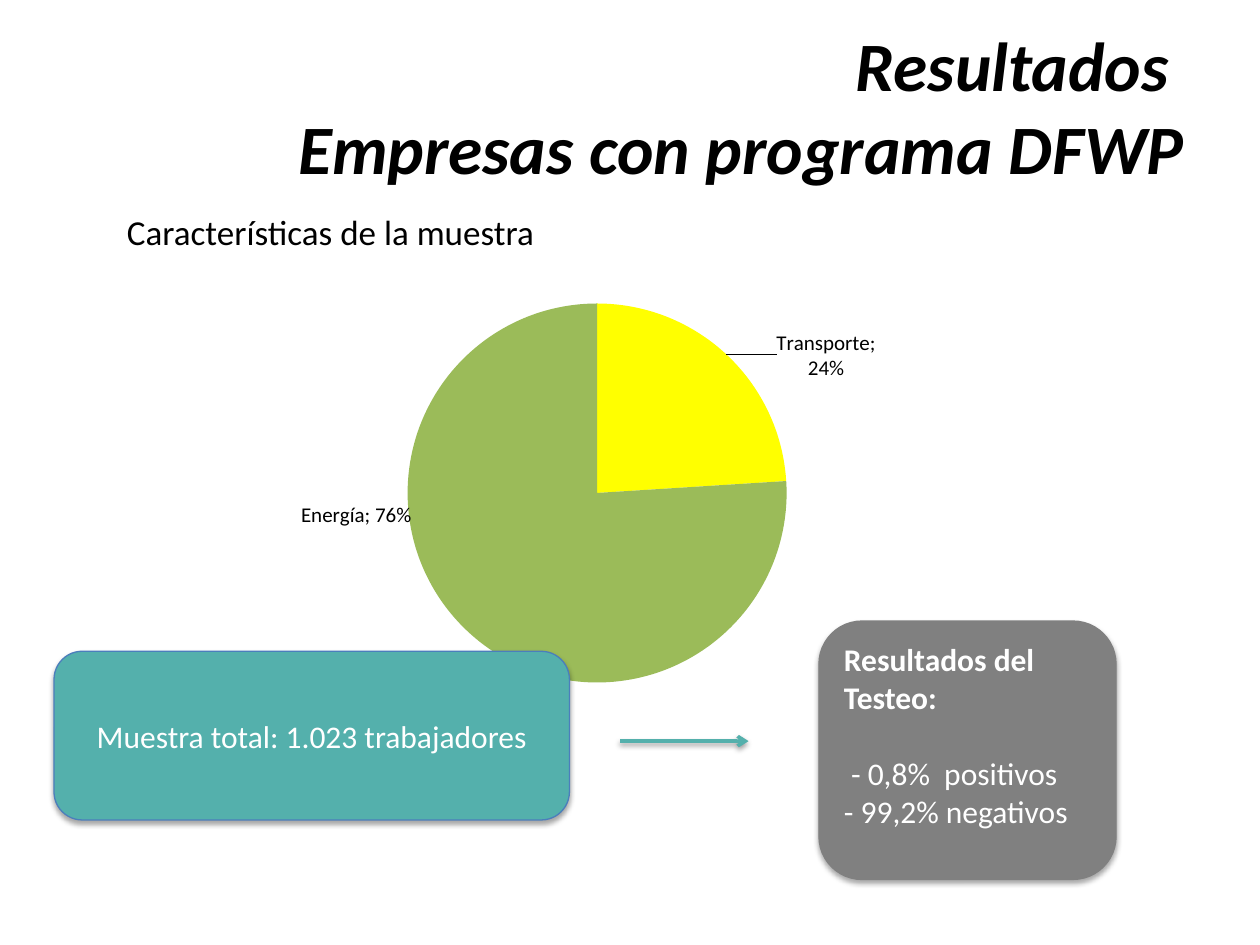
import pptx
import pptx.chart.data
import pptx.dml.color
import pptx.enum.chart
import pptx.enum.shapes
import pptx.enum.text
import pptx.oxml
import pptx.util
from lxml import etree

Cm, Pt = pptx.util.Cm, pptx.util.Pt
RGB = pptx.dml.color.RGBColor.from_string
ALIGN = pptx.enum.text.PP_ALIGN
ANCHOR = pptx.enum.text.MSO_ANCHOR
SHAPE = pptx.enum.shapes.MSO_SHAPE
CHART = pptx.enum.chart
NS = 'xmlns:a="http://schemas.openxmlformats.org/drawingml/2006/main"'


class Theme:
    face = "Calibri"
    black, white = RGB("000000"), RGB("FFFFFF")
    teal, edge, gray = RGB("54B0AC"), RGB("4B7EBC"), RGB("808080")
    blue, yellow, green = RGB("4F81BD"), RGB("FFFF00"), RGB("9BBB59")
    title, head, body, label = Pt(39.6), Pt(20), Pt(18), Pt(12)


def write(frame, lines, align, anchor, color, **style):
    """Fill a text frame from (text, paragraph format, font format) rows."""
    frame.word_wrap = True
    frame.vertical_anchor = anchor
    for i, (text, form, extra) in enumerate(lines):
        para = frame.add_paragraph() if i else frame.paragraphs[0]
        para.text = text
        for name, value in {"alignment": align, **form}.items():
            setattr(para, name, value)
        for run in para.runs:
            for name, value in {"name": Theme.face, **style, **extra}.items():
                setattr(run.font, name, value)
            run.font.color.rgb = color


def shade(shape, alpha):
    """Add a soft shadow straight below, once fill and line are set."""
    shape._element.spPr.append(pptx.oxml.parse_xml(
        f'<a:effectLst {NS}><a:outerShdw blurRad="{Pt(3.1)}" dist="{Pt(1.8)}" '
        f'dir="5400000" rotWithShape="0"><a:srgbClr val="000000">'
        f'<a:alpha val="{alpha * 1000}"/></a:srgbClr></a:outerShdw></a:effectLst>'))


deck = pptx.Presentation()
deck.slide_width, deck.slide_height = Cm(25.4), Cm(19.05)
slide = deck.slides.add_slide(deck.slide_layouts[6])
shapes = slide.shapes

# Headings
title = shapes.add_textbox(Cm(1.27), Cm(0.53), Cm(22.86), Cm(3.18))
write(title.text_frame, [("Resultados \vEmpresas con programa DFWP", {}, {})],
      ALIGN.RIGHT, ANCHOR.MIDDLE, Theme.black,
      size=Theme.title, bold=True, italic=True)
head = shapes.add_textbox(Cm(2.31), Cm(4.11), Cm(10.64), Cm(1.4))
write(head.text_frame, [("Características de la muestra", {}, {})],
      ALIGN.LEFT, ANCHOR.TOP, Theme.black, size=Theme.head)

# Sample by sector
data = pptx.chart.data.CategoryChartData(number_format="0%")
data.categories = ["", "Transporte", "Energía"]
data.add_series("Series 1", [None, 0.24, 0.76])
chart = shapes.add_chart(CHART.XL_CHART_TYPE.PIE, Cm(5.51), Cm(5.13),
                         Cm(12.8), Cm(8.99), data).chart
chart.has_legend = chart.has_title = False
chart.font.name, chart.font.size = Theme.face, Theme.label
chart.font.color.rgb = Theme.black
plot = chart.plots[0]
plot.vary_by_categories = True
pie = plot.series[0]
for i, color in enumerate([Theme.blue, Theme.yellow, Theme.green]):
    fill = pie.points[i].format.fill
    fill.solid()
    fill.fore_color.rgb = color

C = 'xmlns:c="http://schemas.openxmlformats.org/drawingml/2006/chart"'
FLAGS = "".join(f'<c:show{name} val="{on}"/>' for name, on in [
    ("LegendKey", 0), ("Val", 1), ("CatName", 1), ("SerName", 0),
    ("Percent", 0), ("BubbleSize", 0)])
FORM = '<c:numFmt formatCode="0%" sourceLinked="0"/>'
PLACE = '<c:dLblPos val="outEnd"/>'
moved = "".join(
    f'<c:dLbl><c:idx val="{i}"/><c:layout><c:manualLayout><c:x val="{x}"/>'
    f'<c:y val="{y}"/></c:manualLayout></c:layout>{FORM}{PLACE}{FLAGS}'
    f'<c:separator>; </c:separator></c:dLbl>'
    for i, x, y in [(1, 0.07, 0.07), (2, -0.08, -0.3)])
labels = pptx.oxml.parse_xml(
    f'<c:dLbls {C}><c:dLbl><c:idx val="0"/><c:delete val="1"/></c:dLbl>{moved}'
    f'{FORM}{PLACE}{FLAGS}<c:separator>; </c:separator>'
    f'<c:showLeaderLines val="1"/></c:dLbls>')
pie._element.find("{*}cat").addprevious(labels)

area = chart._chartSpace.chart.plotArea
for old in area.findall("{*}layout"):
    area.remove(old)
sides = "".join(f'<c:{key} val="{value}"/>' for key, value in
                [("x", 0.21), ("y", 0.11), ("w", 0.6), ("h", 0.85)])
area.insert(0, pptx.oxml.parse_xml(
    f'<c:layout {C}><c:manualLayout><c:layoutTarget val="inner"/>'
    f'<c:xMode val="edge"/><c:yMode val="edge"/>{sides}'
    f'</c:manualLayout></c:layout>'))

# Sample size and test results
cards = [
    ((16.51, 12.52, 5.99, 5.21), Theme.gray, Theme.gray, ALIGN.LEFT, ANCHOR.TOP,
     [("Resultados del Testeo:", {}, {"bold": True}),
      (" - 0,8%  positivos", {"space_before": Pt(22)}, {}),
      ("- 99,2% negativos", {}, {})]),
    ((1.09, 13.13, 10.39, 3.4), Theme.teal, Theme.edge, ALIGN.CENTER, ANCHOR.MIDDLE,
     [("Muestra total: 1.023 trabajadores", {}, {})]),
]
for box, color, edge, align, anchor, lines in cards:
    card = shapes.add_shape(SHAPE.ROUNDED_RECTANGLE, *map(Cm, box))
    card.fill.solid()
    card.fill.fore_color.rgb = color
    card.line.color.rgb = edge
    card.line.width = Pt(0.75)
    shade(card, 35)
    write(card.text_frame, lines, align, anchor, Theme.white, size=Theme.body)

arrow = shapes.add_connector(pptx.enum.shapes.MSO_CONNECTOR.STRAIGHT,
                             Cm(12.5), Cm(14.94), Cm(15.09), Cm(14.94))
arrow.line.color.rgb = Theme.teal
arrow.line.width = Pt(2)
tip = etree.SubElement(arrow.line._get_or_add_ln(), pptx.oxml.ns.qn("a:tailEnd"))
tip.set("type", "arrow")
shade(arrow, 38)

deck.save("out.pptx")
